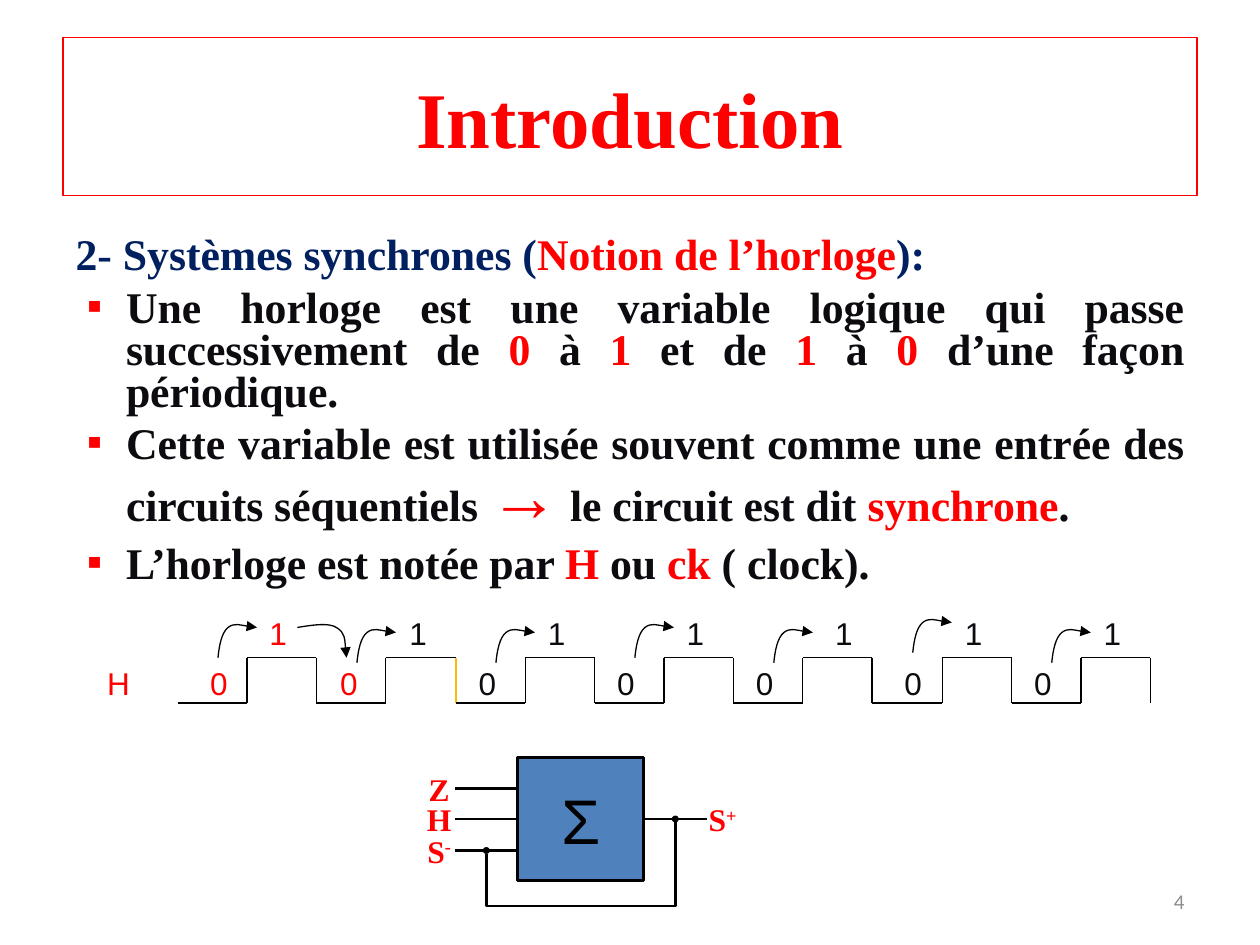
from lxml.etree import SubElement
from pptx import Presentation
from pptx.dml.color import RGBColor
from pptx.enum.shapes import MSO_CONNECTOR, MSO_SHAPE
from pptx.enum.text import MSO_ANCHOR, MSO_AUTO_SIZE, PP_ALIGN
from pptx.oxml.ns import qn
from pptx.util import Inches, Pt

RED = RGBColor(0xFF, 0x00, 0x00)
NAVY = RGBColor(0x00, 0x20, 0x60)
INK = RGBColor(0x0D, 0x0A, 0x10)
BLACK = RGBColor(0x00, 0x00, 0x00)
BLUE = RGBColor(0x4F, 0x81, 0xBD)
ORANGE = RGBColor(0xFE, 0xB8, 0x0A)
GREY = RGBColor(0x8C, 0x8C, 0x8C)

TITLE_FORMAT = {"name": "Times New Roman", "size": Pt(45), "bold": True}
BODY_FORMAT = {"name": "Times New Roman", "size": Pt(25), "bold": True}
PORT_FORMAT = {"name": "Times New Roman", "size": Pt(18), "bold": True}
SIGMA_FORMAT = {"name": "Arial", "size": Pt(36), "bold": False}
LEVEL_FORMAT = {"name": "Arial", "size": Pt(18), "bold": False}
NUMBER_FORMAT = {"name": "Calibri", "size": Pt(12), "bold": False}
NO_MARGINS = dict.fromkeys(("margin_left", "margin_top", "margin_right", "margin_bottom"), 0)


def write(paragraph, parts, font_format):
    for text, color in parts:
        run = paragraph.add_run()
        run.text = text
        run.font.color.rgb = color
        for attribute, value in font_format.items():
            setattr(run.font, attribute, value)


def draw_line(line_shape, color, width, head=None, tail=None, end_size="med"):
    line_shape.line.color.rgb = color
    line_shape.line.width = Pt(width)
    properties = line_shape._element.spPr
    for tag, end in (("a:headEnd", head), ("a:tailEnd", tail)):
        if end:
            SubElement(properties.find(qn("a:ln")), qn(tag), type=end, w=end_size, len=end_size)
    if properties.find(qn("a:effectLst")) is None:
        SubElement(properties, qn("a:effectLst"))


deck = Presentation()
deck.slide_width, deck.slide_height = Inches(10), Inches(7.5)
slide = deck.slides.add_slide(deck.slide_layouts[1])
shapes = slide.shapes

# Title
title = shapes.title
title.left, title.top, title.width, title.height = [Inches(v) for v in (0.5, 0.3, 9, 1.25)]
title.line.color.rgb = RED
title.line.width = Pt(0.75)
title.text_frame.vertical_anchor = MSO_ANCHOR.MIDDLE
title.text_frame.paragraphs[0].alignment = PP_ALIGN.CENTER
write(title.text_frame.paragraphs[0], [("Introduction", RED)], TITLE_FORMAT)

# Clock definition
definition = slide.placeholders[1]
definition.left, definition.top, definition.width, definition.height = [
    Inches(v) for v in (0.5, 1.75, 9, 4.11)]
definition.text_frame.auto_size = MSO_AUTO_SIZE.NONE
heading = definition.text_frame.paragraphs[0]
heading.space_before = Pt(0)
heading_props = heading._p.get_or_add_pPr()
heading_props.set("marL", str(Inches(0.21)))
heading_props.set("indent", str(-Inches(0.21)))
SubElement(heading_props, qn("a:buNone"))
write(heading, [("2- Systèmes synchrones (", NAVY), ("Notion de l’horloge", RED),
                ("):", NAVY)], BODY_FORMAT)

points = [
    [("Une horloge est une variable logique qui passe successivement de ", INK),
     ("0", RED), (" à ", INK), ("1", RED), (" et de ", INK), ("1", RED),
     (" à ", INK), ("0", RED), (" d’une façon périodique.", INK)],
    [("Cette variable est utilisée souvent comme une entrée des circuits séquentiels ", INK),
     ("→", RED), (" le circuit est dit ", INK), ("synchrone", RED), (".", INK)],
    [("L’horloge est notée par ", INK), ("H", RED), (" ou ", INK), ("ck", RED),
     (" ( clock).", INK)],
]
for parts in points:
    point = definition.text_frame.add_paragraph()
    point.alignment = PP_ALIGN.JUSTIFY
    point.line_spacing = 0.8
    point.space_before = Pt(6)
    point_props = point._p.get_or_add_pPr()
    point_props.set("marL", str(Inches(0.4)))
    point_props.set("indent", str(-Inches(0.31)))
    bullet_color = SubElement(point_props, qn("a:buClr"))
    SubElement(bullet_color, qn("a:srgbClr"), val=str(RED))
    SubElement(point_props, qn("a:buFont"), typeface="Arial")
    SubElement(point_props, qn("a:buChar"), char="▪")
    write(point, parts, BODY_FORMAT)
    for run in point.runs:
        if run.text == "→":
            run.font.size = Pt(40)

# Circuit block
circuit = shapes.add_shape(MSO_SHAPE.RECTANGLE, Inches(4.11), Inches(6.01), Inches(1), Inches(0.98))
circuit.shadow.inherit = False
circuit.fill.solid()
circuit.fill.fore_color.rgb = BLUE
circuit.line.color.rgb = BLACK
circuit.line.width = Pt(1.5)
circuit.text_frame.word_wrap = False
circuit.text_frame.vertical_anchor = MSO_ANCHOR.MIDDLE
circuit.text_frame.paragraphs[0].alignment = PP_ALIGN.CENTER
write(circuit.text_frame.paragraphs[0], [("Σ", BLACK)], SIGMA_FORMAT)

# Ports: name, superscript, label left, wire start, wire height
Z_Y, H_Y, S_Y = 6.26, 6.5, 6.75
ports = [("Z", "", 3.36, 3.61, Z_Y), ("H", "", 3.36, 3.61, H_Y),
         ("S", "-", 3.36, 3.61, S_Y), ("S", "+", 5.61, 5.11, H_Y)]
for name, superscript, label_x, wire_x, y in ports:
    port = shapes.add_textbox(Inches(label_x), Inches(y - 0.1), Inches(0.25), Inches(0.2))
    for attribute, value in NO_MARGINS.items():
        setattr(port.text_frame, attribute, value)
    port.text_frame.word_wrap = False
    port.text_frame.vertical_anchor = MSO_ANCHOR.MIDDLE
    port_text = port.text_frame.paragraphs[0]
    port_text.alignment = PP_ALIGN.CENTER
    write(port_text, [(name, RED)], PORT_FORMAT)
    if superscript:
        write(port_text, [(superscript, RED)], PORT_FORMAT)
        port_text.runs[1].font._element.set("baseline", "30000")
    wire = shapes.add_connector(MSO_CONNECTOR.STRAIGHT, Inches(wire_x), Inches(y),
                                Inches(wire_x + 0.5), Inches(y))
    if superscript == "+":
        wire.begin_connect(circuit, 3)
    elif name == "H":
        wire.end_connect(circuit, 1)
    draw_line(wire, BLACK, 1.5)

# Clock signal: low, high, rise, fall in each period
START, END, HIGH, LOW, PERIODS = 1.41, 9.13, 5.22, 5.58, 7
half = (END - START) / (2 * PERIODS)
for period in range(PERIODS):
    x0, x1, x2 = [round(START + half * (2 * period + i), 2) for i in range(3)]
    fall_color = ORANGE if period == 1 else BLACK
    for xa, ya, xb, yb, color in [(x0, LOW, x1, LOW, BLACK), (x1, HIGH, x2, HIGH, BLACK),
                                  (x1, LOW, x1, HIGH, BLACK), (x2, LOW, x2, HIGH, fall_color)]:
        edge = shapes.add_connector(MSO_CONNECTOR.STRAIGHT, Inches(xa), Inches(ya),
                                    Inches(xb), Inches(yb))
        draw_line(edge, color, 0.75)

# Signal name and logic levels
levels = [("H", 0.55, 5.22, 0.78, RED)]
for i, x in enumerate((1.57, 2.6, 3.7, 4.8, 5.9, 7.08, 8.11)):
    levels.append(("0", x, 5.22, 0.31, RED if i < 2 else INK))
for i, x in enumerate((2.04, 3.15, 4.25, 5.35, 6.53, 7.56, 8.66)):
    levels.append(("1", x, 4.82, 0.31, RED if i < 1 else INK))
for text, x, y, width, color in levels:
    level = shapes.add_textbox(Inches(x), Inches(y), Inches(width), Inches(0.41))
    level.text_frame.word_wrap = True
    level.text_frame.paragraphs[0].alignment = PP_ALIGN.CENTER
    write(level.text_frame.paragraphs[0], [(text, color)], LEVEL_FORMAT)

# Transition arrows: each three points after the start make one Bezier curve
RISE = [(0, 0), (0.01, -0.1), (0.03, -0.2), (0.08, -0.24),
        (0.13, -0.28), (0.27, -0.24), (0.31, -0.24)]
FALL = [(0, 0), (0.12, -0.02), (0.25, -0.04), (0.31, 0),
        (0.38, 0.04), (0.38, 0.14), (0.39, 0.24)]
arrows = [(1.73 + 2 * half * i, y, RISE)
          for i, y in enumerate((5.22, 5.26, 5.26, 5.22, 5.26, 5.18, 5.26))]
arrows.append((2.36, 4.98, FALL))
for x, y, controls in arrows:
    corners = [(Inches(x + dx), Inches(y + dy)) for dx, dy in controls]
    builder = shapes.build_freeform(*corners[0])
    builder.add_line_segments(corners[1:], close=False)
    arrow = builder.convert_to_shape()
    outline = arrow._element.spPr.find(".//" + qn("a:path"))
    segments = outline.findall(qn("a:lnTo"))
    for first in (0, 3):
        curve = SubElement(outline, qn("a:cubicBezTo"))
        for segment in segments[first:first + 3]:
            curve.append(segment[0])
            outline.remove(segment)
    arrow.fill.background()
    draw_line(arrow, BLACK, 0.75, tail="triangle")

# Feedback loop from output to input
feedback_corners = [(Inches(x), Inches(y))
                    for x, y in ((5.36, H_Y), (5.36, 7.19), (3.86, 7.19), (3.86, S_Y))]
builder = shapes.build_freeform(*feedback_corners[0])
builder.add_line_segments(feedback_corners[1:], close=False)
feedback = builder.convert_to_shape()
feedback.fill.background()
draw_line(feedback, BLACK, 1.5, "oval", "oval", "sm")

# Slide number
number = shapes.add_textbox(Inches(7.17), Inches(6.95), Inches(2.33), Inches(0.4))
number.text_frame.word_wrap = True
number.text_frame.vertical_anchor = MSO_ANCHOR.MIDDLE
number.text_frame.paragraphs[0].alignment = PP_ALIGN.RIGHT
write(number.text_frame.paragraphs[0], [("4", GREY)], NUMBER_FORMAT)

deck.save("out.pptx")
